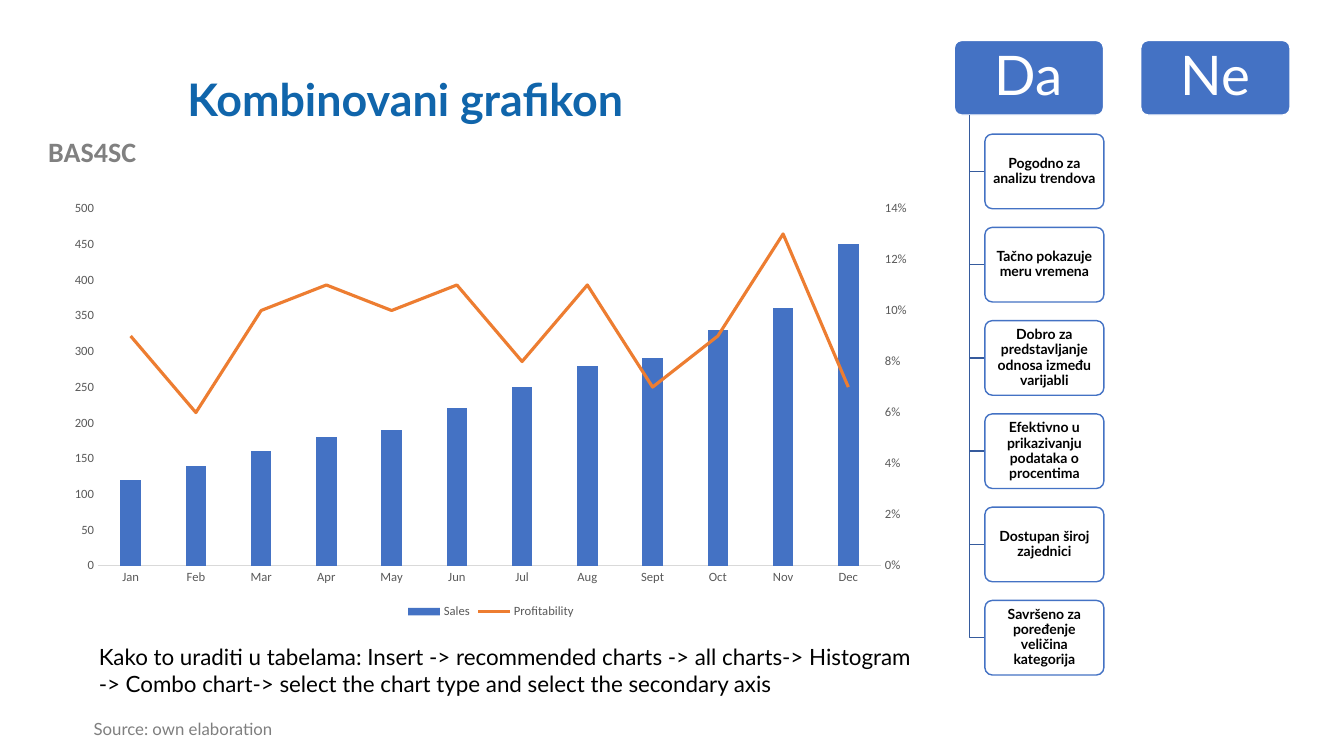
from lxml import etree
from pptx import Presentation
from pptx.chart.data import CategoryChartData
from pptx.dml.color import RGBColor
from pptx.enum import chart as ch, shapes, text
from pptx.oxml import parse_xml
from pptx.oxml.ns import nsdecls, qn
from pptx.util import Cm, Pt

WHITE = RGBColor(0xFF, 0xFF, 0xFF)
BLACK = RGBColor(0, 0, 0)
BLUE = RGBColor(0x44, 0x72, 0xC4)
NAVY = RGBColor(0x36, 0x5B, 0x9D)
TITLE = RGBColor(0x10, 0x65, 0xAB)
ORANGE = RGBColor(0xED, 0x7D, 0x31)
GREY = RGBColor(0x80, 0x80, 0x80)
SOURCE = RGBColor(0x7F, 0x7F, 0x7F)
LABEL = RGBColor(0x59, 0x59, 0x59)
RULE = RGBColor(0xD9, 0xD9, 0xD9)
LEFT, MID = text.PP_ALIGN.LEFT, text.PP_ALIGN.CENTER


def write(shape, words, size, color, bold=False, face="Lato", align=LEFT,
          space=1.0, middle=False, pad=(0.25, 0.13)):
    """Put one styled paragraph in the shape; pad is side and top inset in cm."""
    frame = shape.text_frame
    frame.word_wrap = True
    frame.margin_left = frame.margin_right = Cm(pad[0])
    frame.margin_top = frame.margin_bottom = Cm(pad[1])
    anchor = text.MSO_ANCHOR
    frame.vertical_anchor = anchor.MIDDLE if middle else anchor.TOP
    para = frame.paragraphs[0]
    para.text = words
    para.alignment, para.line_spacing = align, space
    font = para.font
    font.name, font.size, font.bold = face, Pt(size), bold
    font.color.rgb = color


def card(x, y, wide, fill, edge):
    """Add a rounded box with the height and corners all boxes share."""
    box = slide.shapes.add_shape(shapes.MSO_SHAPE.ROUNDED_RECTANGLE,
                                 Cm(x), Cm(y), Cm(wide), Cm(1.88))
    box.shadow.inherit = False
    box.adjustments[0] = 0.1
    box.fill.solid()
    box.fill.fore_color.rgb = fill
    box.line.color.rgb = edge
    box.line.width = Pt(1)
    return box


deck = Presentation()
deck.slide_width, deck.slide_height = Cm(33.87), Cm(19.05)
slide = deck.slides.add_slide(deck.slide_layouts[6])

# Headings and captions
labels = [
    ((0, 3.25, 4.65, 1.12), "BAS4SC", 20, GREY,
     dict(bold=True, face="Calibri", align=MID)),
    ((4.47, 1.02, 27.08, 3.1), "Kombinovani grafikon", 32, TITLE,
     dict(bold=True, space=0.9, middle=True)),
    ((2.11, 18.03, 12.73, 0.86), "Source: own elaboration", 12, SOURCE,
     dict(space=0.9)),
    ((2.24, 16.08, 21.29, 1.63),
     "Kako to uraditi u tabelama: Insert -> recommended charts -> all charts-> "
     "Histogram -> Combo chart-> select the chart type and select the "
     "secondary axis", 16, BLACK, {}),
]
for place, words, size, color, style in labels:
    box = slide.shapes.add_textbox(*map(Cm, place))
    write(box, words, size, color, **style)

# Yes and no columns
for x, words in ((24.05, "Da"), (28.75, "Ne")):
    write(card(x, 1.02, 3.76, BLUE, WHITE), words, 39, WHITE, align=MID,
          space=0.9, middle=True, pad=(0.25, 0.18))

points = [
    "Pogodno za analizu trendova",
    "Tačno pokazuje meru vremena",
    "Dobro za predstavljanje odnosa između varijabli",
    "Efektivno u prikazivanju podataka o procentima",
    "Dostupan široj zajednici",
    "Savršeno za poređenje veličina kategorija",
]
STEM, EDGE = 24.43, 24.82
for i, words in enumerate(points):
    top = 3.38 + 2.35 * i
    half = top + 0.94
    path = slide.shapes.build_freeform(Cm(STEM), Cm(2.9))
    path.add_line_segments([(Cm(STEM), Cm(half)), (Cm(EDGE), Cm(half))],
                           close=False)
    elbow = path.convert_to_shape()
    elbow.shadow.inherit = False
    elbow.fill.background()
    elbow.line.color.rgb = NAVY
    elbow.line.width = Pt(1)

    box = card(EDGE, top, 3, WHITE, BLUE)
    tint = box.fill._xPr.find(".//" + qn("a:srgbClr"))
    etree.SubElement(tint, qn("a:alpha")).set("val", "90000")
    write(box, words, 10, BLACK, bold=True, align=MID, space=0.9,
          middle=True, pad=(0.1, 0.09))

# Combined chart
data = CategoryChartData()
data.categories = ["Jan", "Feb", "Mar", "Apr", "May", "Jun",
                   "Jul", "Aug", "Sept", "Oct", "Nov", "Dec"]
data.add_series("Sales", [120, 140, 160, 180, 190, 220,
                          250, 280, 290, 330, 360, 450])
data.add_series("Profitability", [0.09, 0.06, 0.1, 0.11, 0.1, 0.11,
                                  0.08, 0.11, 0.07, 0.09, 0.13, 0.07], "0%")
chart = slide.shapes.add_chart(
    ch.XL_CHART_TYPE.COLUMN_CLUSTERED,
    Cm(1.45), Cm(4.85), Cm(21.84), Cm(10.85), data).chart
chart.has_title = False
chart.font.name, chart.font.size = "Calibri", Pt(10)
chart.font.color.rgb = BLACK
chart.has_legend = True
chart.legend.position = ch.XL_LEGEND_POSITION.BOTTOM
chart.legend.include_in_layout = False

cats, vals = chart.category_axis, chart.value_axis
vals.has_major_gridlines = False
vals.minimum_scale, vals.maximum_scale, vals.major_unit = 0, 500, 50
for axis in (cats, vals):
    axis.major_tick_mark = axis.minor_tick_mark = ch.XL_TICK_MARK.NONE
for part in (cats.tick_labels, vals.tick_labels, chart.legend):
    part.font.name, part.font.size = "Calibri", Pt(9)
    part.font.color.rgb = LABEL
cats.format.line.color.rgb = RULE
cats.format.line.width = Pt(0.75)
vals.format.line.fill.background()

bars = chart.plots[0]
bars.gap_width, bars.overlap, bars.vary_by_categories = 219, -27, False
sales = bars.series[0].format.fill
sales.solid()
sales.fore_color.rgb = BLUE

# Move the second series to a line on the right axis
area = chart._chartSpace.chart.plotArea
column = area.find(qn("c:barChart"))
rate = column.findall(qn("c:ser"))[1]
for flag in rate.findall(qn("c:invertIfNegative")):
    rate.remove(flag)
line = parse_xml(
    f'<c:lineChart {nsdecls("c")}><c:grouping val="standard"/>'
    '<c:varyColors val="0"/><c:marker val="1"/>'
    '<c:axId val="5001"/><c:axId val="5002"/></c:lineChart>')
line.insert(2, rate)
column.addnext(line)
right = parse_xml(
    f'<c:valAx {nsdecls("c", "a")}><c:axId val="5002"/><c:scaling>'
    '<c:orientation val="minMax"/><c:max val="0.14"/><c:min val="0"/>'
    '</c:scaling><c:delete val="0"/><c:axPos val="r"/>'
    '<c:numFmt formatCode="0%" sourceLinked="0"/>'
    '<c:majorTickMark val="none"/><c:minorTickMark val="none"/>'
    '<c:tickLblPos val="nextTo"/><c:spPr><a:ln><a:noFill/></a:ln></c:spPr>'
    '<c:txPr><a:bodyPr/><a:p><a:pPr><a:defRPr sz="900"><a:solidFill>'
    f'<a:srgbClr val="{LABEL}"/></a:solidFill><a:latin typeface="Calibri"/>'
    '</a:defRPr></a:pPr><a:endParaRPr lang="en-US"/></a:p></c:txPr>'
    '<c:crossAx val="5001"/><c:crosses val="max"/>'
    '<c:majorUnit val="0.02"/></c:valAx>')
base = parse_xml(
    f'<c:catAx {nsdecls("c")}><c:axId val="5001"/><c:scaling>'
    '<c:orientation val="minMax"/></c:scaling><c:delete val="1"/>'
    '<c:axPos val="b"/><c:crossAx val="5002"/></c:catAx>')
area.find(qn("c:valAx")).addnext(right)
right.addnext(base)

profit = chart.plots[1].series[0]
profit.smooth = False
profit.marker.style = ch.XL_MARKER_STYLE.NONE
profit.format.line.color.rgb = ORANGE
profit.format.line.width = Pt(2.25)

deck.save("out.pptx")
